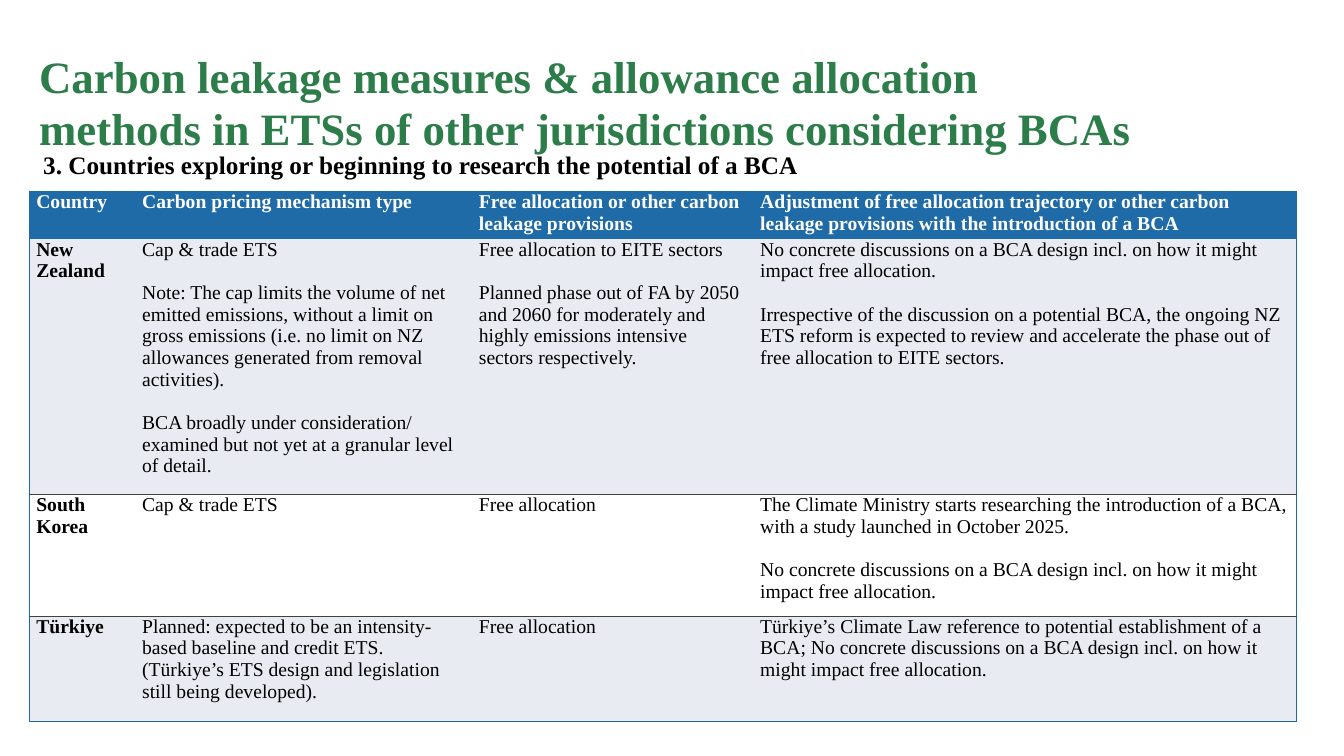
from lxml import etree
from pptx import Presentation
from pptx.dml.color import RGBColor
from pptx.oxml import ns
from pptx.util import Inches, Pt

COLORS = {"green": "2C7D4A", "blue": "1F6BA7", "band": "E8EBF1",
          "white": "FFFFFF", "black": "000000", "rule": "404040"}
FONT = "Times New Roman"
COLUMNS = [1.05, 3.34, 2.79, 5.39]
ROWS = [0.44, 2.36, 1.21, 1.05]
LINE = 15.5
NO_TALKS = ("No concrete discussions on a BCA design incl. on how it "
            "might impact free allocation.")
HEADER = ["Country", "Carbon pricing mechanism type",
          "Free allocation or other carbon leakage provisions",
          "Adjustment of free allocation trajectory or other carbon leakage "
          "provisions with the introduction of a BCA"]
NEW_ZEALAND = [
    "New Zealand",
    ["Cap & trade ETS",
     "Note: The cap limits the volume of net emitted emissions, without a limit "
     "on gross emissions (i.e. no limit on NZ allowances generated from removal "
     "activities).",
     "BCA broadly under consideration/ examined but not yet at a granular level "
     "of detail."],
    ["Free allocation to EITE sectors",
     "Planned phase out of FA by 2050 and 2060 for moderately and highly "
     "emissions intensive sectors respectively."],
    [NO_TALKS,
     "Irrespective of the discussion on a potential BCA, the ongoing NZ ETS "
     "reform is expected to review and accelerate the phase out of free "
     "allocation to EITE sectors."]]
SOUTH_KOREA = [
    "South Korea", "Cap & trade ETS", "Free allocation",
    ["The Climate Ministry starts researching the introduction of a BCA, with a "
     "study launched in October 2025.", NO_TALKS]]
TURKIYE = [
    "Türkiye",
    ["Planned: expected to be an intensity-based baseline and credit ETS.",
     "(Türkiye’s ETS design and legislation still being developed)."],
    "Free allocation",
    "Türkiye’s Climate Law reference to potential establishment of a BCA; No "
    "concrete discussions on a BCA design incl. on how it might impact free "
    "allocation."]
TABLE = [HEADER, NEW_ZEALAND, SOUTH_KOREA, TURKIYE]


def write(frame, content, size, color, bold=False, gap=0, spacing=None):
    """Fill a text frame with one or more formatted paragraphs."""
    frame.word_wrap = True
    lines = [content] if isinstance(content, str) else content
    for index, line in enumerate(lines):
        para = frame.add_paragraph() if index else frame.paragraphs[0]
        if index and gap:
            para.space_before = Pt(gap)
        if spacing:
            para.line_spacing = spacing
        span = para.add_run()
        span.text = line
        span.font.name = FONT
        span.font.size = Pt(size)
        span.font.bold = bold
        span.font.color.rgb = RGBColor.from_string(COLORS[color])


def add_text(page, content, left, top, width, height, **style):
    """Add a text box."""
    box = page.shapes.add_textbox(Inches(left), Inches(top),
                                  Inches(width), Inches(height))
    write(box.text_frame, content, **style)


def set_border(cell, side, color, width):
    """Draw one side of a cell, or hide it when the width is zero."""
    line = etree.Element(ns.qn(f"a:ln{side}"), w=str(Pt(width)))
    if width:
        fill = etree.SubElement(line, ns.qn("a:solidFill"))
        etree.SubElement(fill, ns.qn("a:srgbClr"), val=COLORS[color])
    else:
        etree.SubElement(line, ns.qn("a:noFill"))
    properties = cell._tc.get_or_add_tcPr()
    position = sum(child.tag.startswith(ns.qn("a:ln")) for child in properties)
    properties.insert(position, line)


def fill_cell(cell, content, row, column):
    """Write and style one cell according to its place in the table."""
    last_row, last_column = len(ROWS) - 1, len(COLUMNS) - 1
    cell.margin_left = cell.margin_right = Inches(0.07)
    cell.margin_top = cell.margin_bottom = 0
    cell.fill.solid()
    fill = "blue" if row == 0 else "band" if row % 2 else "white"
    cell.fill.fore_color.rgb = RGBColor.from_string(COLORS[fill])
    write(cell.text_frame, content, size=14,
          color="black" if row else "white", bold=row == 0 or column == 0,
          gap=0 if row == last_row else LINE)
    set_border(cell, "L", "blue", 1 if column == 0 else 0)
    set_border(cell, "R", "blue", 1 if column == last_column else 0)
    set_border(cell, "T", "blue" if row < 2 else "rule", 1 if row < 2 else 0.5)
    outer = row in (0, last_row)
    set_border(cell, "B", "blue" if outer else "rule", 1 if outer else 0.5)


def add_country_table(page, left, top):
    """Add the table of countries."""
    shape = page.shapes.add_table(len(ROWS), len(COLUMNS), Inches(left), Inches(top),
                                  Inches(sum(COLUMNS)), Inches(sum(ROWS)))
    table = shape.table
    for column, width in zip(table.columns, COLUMNS):
        column.width = Inches(width)
    for row, height in zip(table.rows, ROWS):
        row.height = Inches(height)
    for row, contents in enumerate(TABLE):
        for column, content in enumerate(contents):
            fill_cell(table.cell(row, column), content, row, column)


def main():
    """Build the slide and save it."""
    deck = Presentation()
    deck.slide_width, deck.slide_height = Inches(13.33), Inches(7.5)
    page = deck.slides.add_slide(deck.slide_layouts[6])
    add_text(page, "Carbon leakage measures & allowance allocation methods in ETSs "
             "of other jurisdictions considering BCAs", 0.29, 0.46, 11.1, 0.58,
             size=32, color="green", bold=True, spacing=0.97)
    add_country_table(page, 0.29, 1.9)
    add_text(page, "3. Countries exploring or beginning to research the potential "
             "of a BCA", 0.33, 1.47, 12.12, 5.49, size=18, color="black",
             bold=True, spacing=0.9)
    deck.save("out.pptx")


if __name__ == "__main__":
    main()
